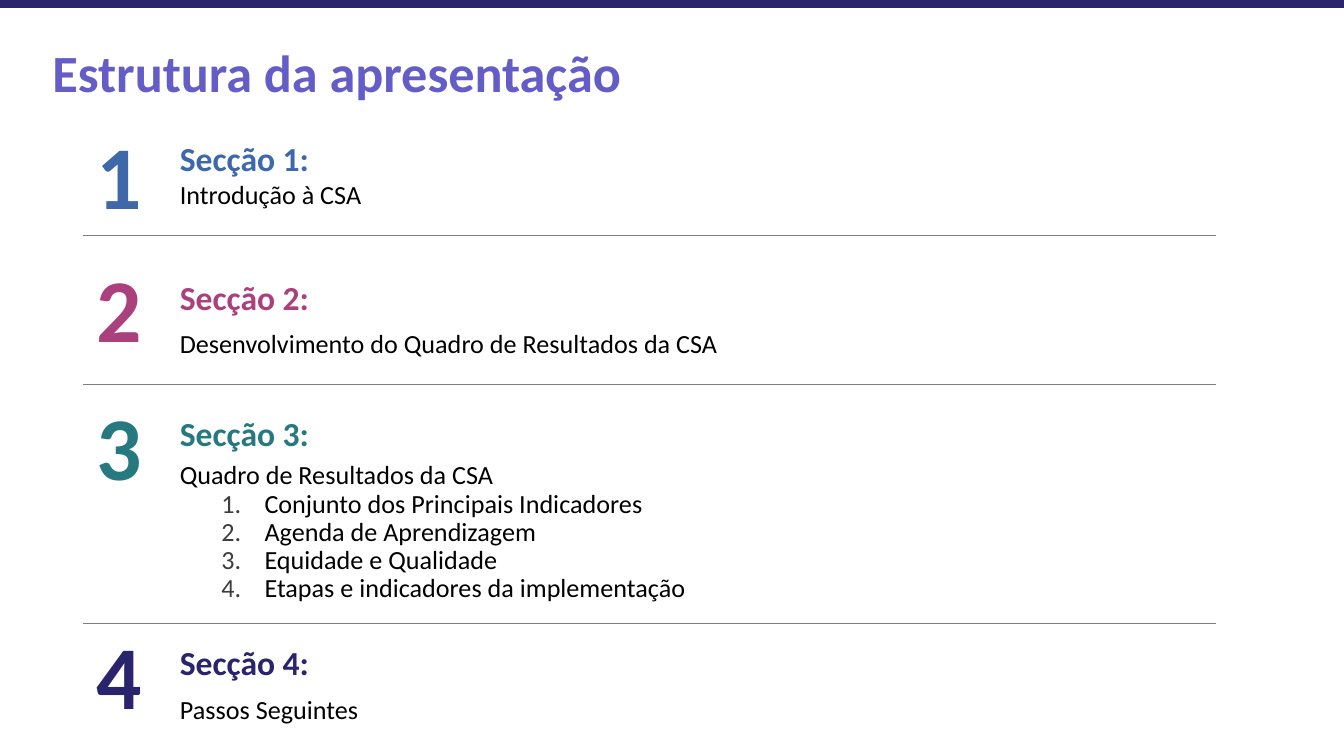
from lxml import etree
from pptx import Presentation
from pptx.dml.color import RGBColor
from pptx.enum.shapes import MSO_CONNECTOR, MSO_SHAPE
from pptx.enum.text import MSO_ANCHOR, MSO_AUTO_SIZE, PP_ALIGN
from pptx.oxml.ns import qn
from pptx.util import Inches, Pt


def style(p, size, color, bold=False):
    p.alignment = PP_ALIGN.LEFT
    for r in p.runs:
        r.font.name = "Calibri"
        r.font.size = Pt(size)
        r.font.bold = bold
        r.font.color.rgb = RGBColor.from_string(color)


def add_text(left, top, width, height, lines, size, color, bold=False):
    box = s.shapes.add_textbox(Inches(left), Inches(top), Inches(width), Inches(height))
    tf = box.text_frame
    tf.word_wrap = True
    tf.auto_size = MSO_AUTO_SIZE.SHAPE_TO_FIT_TEXT
    tf.text = "\n".join(lines)
    for p in tf.paragraphs:
        style(p, size, color, bold)
    return tf


prs = Presentation()
prs.slide_width = Inches(10)
prs.slide_height = Inches(10 * 9 / 16)
s = prs.slides.add_slide(prs.slide_layouts[5])

# Top band and title
band = s.shapes.add_shape(MSO_SHAPE.RECTANGLE, 0, 0, prs.slide_width, Inches(0.06))
band.shadow.inherit = False
band.fill.solid()
band.fill.fore_color.rgb = RGBColor.from_string("2A246C")
band.line.fill.background()

title = s.shapes.title
title.left, title.top = Inches(0.29), Inches(0.2)
title.width, title.height = Inches(8.76), Inches(0.71)
tf = title.text_frame
tf.text = "Estrutura da apresentação"
tf.auto_size = MSO_AUTO_SIZE.NONE
tf.vertical_anchor = MSO_ANCHOR.TOP
tf.margin_left = tf.margin_right = tf.margin_top = tf.margin_bottom = Inches(0.1)
style(tf.paragraphs[0], 28, "645DC7", True)

# Sections: number colour, heading colour, number width, tops of number, heading
# and body, body width and height, body lines
sections = [
    ("3E68AA", "3D69AC", 0.88, 0.84, 0.98, 1.28, 5, 0.34, ["Introdução à CSA"]),
    ("AA417C", "AA417C", 1.25, 1.83, 2.01, 2.39, 4.43, 0.34,
     ["Desenvolvimento do Quadro de Resultados da CSA"]),
    ("26797F", "26797F", 1.25, 2.86, 3.02, 3.39, 5, 1.16, [
        "Quadro de Resultados da CSA",
        "Conjunto dos Principais Indicadores",
        "Agenda de Aprendizagem",
        "Equidade e Qualidade",
        "Etapas e indicadores da implementação",
    ]),
    ("2A246C", "2A246C", 1.25, 4.56, 4.73, 5.11, 3.9, 0.34, ["Passos Seguintes"]),
]
for i, (num_color, head_color, num_width, num_top, head_top,
        body_top, body_width, body_height, lines) in enumerate(sections, 1):
    add_text(0.62, num_top, num_width, 0.91, [str(i)], 48, num_color, True)
    add_text(1.24, head_top, 3.14, 0.4, [f"Secção {i}:"], 18, head_color, True)
    tf = add_text(1.24, body_top, body_width, body_height, lines, 14, "000000")
    if len(lines) > 1:
        for p in tf.paragraphs:
            p.line_spacing = 0.9
    # Lines after the first form a numbered list
    for p in tf.paragraphs[1:]:
        p.level = 1
        pPr = p._p.get_or_add_pPr()
        pPr.set("marL", str(Inches(0.63)))
        pPr.set("indent", str(Inches(-0.32)))
        bu_color = etree.SubElement(pPr, qn("a:buClr"))
        etree.SubElement(bu_color, qn("a:srgbClr"), val="3D3D3D")
        etree.SubElement(pPr, qn("a:buFont"), typeface="+mj-lt")
        etree.SubElement(pPr, qn("a:buAutoNum"), type="arabicPeriod")

# Dividers between sections
for y in (1.75, 2.86, 4.64):
    line = s.shapes.add_connector(
        MSO_CONNECTOR.STRAIGHT, Inches(0.62), Inches(y), Inches(9.05), Inches(y))
    line.line.color.rgb = RGBColor.from_string("7F7F7F")
    line.line.width = Pt(0.75)
    etree.SubElement(line._element.spPr, qn("a:effectLst"))

prs.save("out.pptx")
